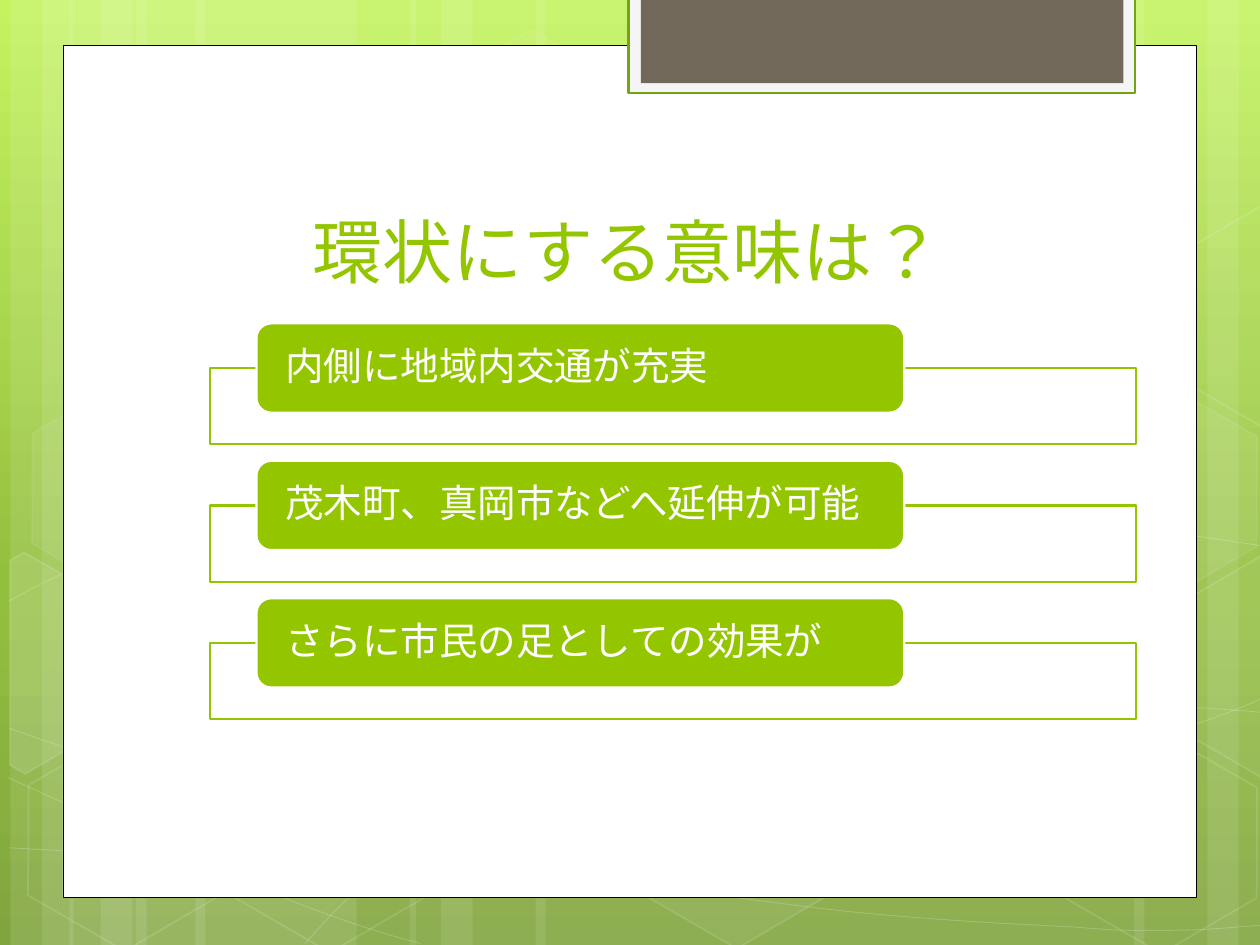
import pptx
import pptx.util
import pptx.dml.color
import pptx.enum.lang
import pptx.enum.shapes
import pptx.enum.text
import pptx.oxml.ns
import copy
import math
from lxml import etree

TITLE = "環状にする意味は？"
ITEMS = ["内側に地域内交通が充実", "茂木町、真岡市などへ延伸が可能", "さらに市民の足としての効果が"]
FONT, GREEN, WHITE = "TeX Gyre Adventor", "94C600", "FFFFFF"
SKY = [(0, "C3F35F"), (62, "93BF3F"), (100, "81A53E")]

# left, width
BANDS = [(2.74, 4.45), (0.21, 1.27), (0.85, 2.11), (3.94, 4.45), (1.4, 1.27), (2.03, 2.11),
         (18.62, 4.45), (24.34, 1.27), (22.86, 2.11), (10.8, 7.82), (8.26, 1.27), (8.89, 2.11)]
# start, then triples of cubic control points
CURVES = [
    [(0.18, 17.09), (1.55, 17.17), (2.92, 17.25), (4.83, 17.22), (6.74, 17.2), (9.09, 17.15),
     (11.63, 16.89), (14.17, 16.64), (17.78, 16.15), (20.12, 15.67), (22.43, 15.19),
     (24.82, 14.43), (25.58, 14)],
    [(0.18, 12.12), (0.91, 11.71), (1.65, 11.33), (3.07, 10.95), (4.52, 10.57), (6.58, 10.01),
     (8.81, 9.83), (11.07, 9.65), (13.82, 9.63), (16.61, 9.83), (19.41, 10.03),
     (24.05, 10.82), (25.58, 11.02)],
    [(0.15, 15.67), (3.23, 17.07), (6.27, 18.47), (8.48, 19.02)],
    [(0.18, 14.68), (0.97, 14.96), (1.78, 15.24), (3.25, 15.65), (4.72, 16.03), (6.93, 16.66),
     (9.07, 17.09), (11.18, 17.53), (13.84, 17.98), (15.95, 18.24), (18.06, 18.52),
     (20.32, 18.62), (21.67, 18.69), (22.99, 18.8), (23.34, 18.75), (24, 18.75),
     (24.66, 18.72), (25.12, 18.67), (25.58, 18.64)],
    [(6.15, 19.02), (6.6, 18.52), (7.06, 18.01), (7.67, 17.55), (8.28, 17.09), (9.14, 16.59),
     (9.86, 16.23), (10.57, 15.88), (11, 15.72), (11.94, 15.47), (12.85, 15.21),
     (14.55, 14.86), (15.44, 14.68), (16.36, 14.5), (16.48, 14.5), (17.27, 14.45),
     (18.06, 14.38), (19.3, 14.3), (20.17, 14.27), (21.06, 14.25), (22.5, 14.27),
     (22.5, 14.27), (23, 14.27), (23.7, 14.27), (24.21, 14.27), (24.66, 14.3),
     (25.1, 14.33), (25.32, 14.35), (25.55, 14.38), (25.48, 14.35), (25.55, 14.38)],
]
# left, top, fill opacity, line opacity
CELLS = [(8.48, 0.91, 4, 8), (12.62, 14.96, 6, 12), (0.28, 15.01, 0, 12), (0.36, 7.92, 7, 8),
         (4.42, 15.04, 0, 12), (19.13, 11.51, 10, 12), (21.18, 15.06, 0, 12), (21.18, 7.98, 7, 8)]
# fill opacity, centre, corners
PARTS = [
    (10, (0.91, 13.59), [(0.2, 11.3), (0.48, 11.13), (2.44, 12.24), (2.41, 14.48),
                         (0.51, 15.6), (0.2, 15.42)]),
    (4, (25.02, 13.21), [(23.52, 12.32), (25.43, 11.2), (25.63, 11.33), (25.63, 15.57),
                         (25.45, 15.67), (23.52, 14.55)]),
    (0, (25.02, 6.12), [(23.52, 5.26), (25.43, 4.14), (25.65, 4.27), (25.63, 8.51),
                        (25.45, 8.61), (23.52, 7.49)]),
]
# left, top, width, height, fill, line, line width
PANELS = [(1.27, 0.91, 22.86, 17.19, WHITE, "000000", 0.5),
          (12.67, -0.05, 10.21, 1.93, "F5F5F5", "74A510", 1.25),
          (12.92, -0.05, 9.73, 1.73, "71685A", None, 0)]

Cm, Pt, qn = pptx.util.Cm, pptx.util.Pt, pptx.oxml.ns.qn
KIND = pptx.enum.shapes.MSO_SHAPE
MID = pptx.enum.text.MSO_ANCHOR.MIDDLE
LEFT = pptx.enum.text.PP_ALIGN.LEFT
TILT = 30


def tint(fill, hue, veil=100):
    fill.solid()
    fill.fore_color.rgb = pptx.dml.color.RGBColor.from_string(hue)
    if veil < 100:
        node = fill._xPr.find(".//" + qn("a:srgbClr"))
        etree.SubElement(node, qn("a:alpha"), val=str(veil * 1000))


def style(shape, hue=None, veil=100, edge=None, width=1, glow=100):
    shape.shadow.inherit = False
    if hue and veil:
        tint(shape.fill, hue, veil)
    else:
        shape.fill.background()
    if edge:
        tint(shape.line.fill, edge, glow)
        shape.line.width = Pt(width)
    else:
        shape.line.fill.background()
    return shape


def box(kind, left, top, wide, high, **look):
    return style(shapes.add_shape(kind, Cm(left), Cm(top), Cm(wide), Cm(high)), **look)


def trace(dots, close, **look):
    dots = [(Cm(x), Cm(y)) for x, y in dots]
    pen = shapes.build_freeform(*dots[0])
    pen.add_line_segments(dots[1:], close=close)
    return style(pen.convert_to_shape(), **look)


def bend(shape):
    legs = shape._element.findall(".//" + qn("a:lnTo"))
    for first, *rest in zip(legs[::3], legs[1::3], legs[2::3]):
        curve = etree.Element(qn("a:cubicBezTo"))
        first.addprevious(curve)
        for leg in (first, *rest):
            curve.append(leg[0])
            leg.getparent().remove(leg)


def turn(dots, mid, angle):
    cos, sin = math.cos(math.radians(angle)), math.sin(math.radians(angle))
    return [(mid[0] + (x - mid[0]) * cos - (y - mid[1]) * sin,
             mid[1] + (x - mid[0]) * sin + (y - mid[1]) * cos) for x, y in dots]


def write(shape, text, size=22, hue=WHITE, align=LEFT, anchor=MID, pad=0.25, rim=0.13, lead=1):
    frame = shape.text_frame
    frame.word_wrap = True
    frame.auto_size = pptx.enum.text.MSO_AUTO_SIZE.NONE
    frame.vertical_anchor = anchor
    frame.margin_left = frame.margin_right = Cm(pad)
    frame.margin_top = frame.margin_bottom = Cm(rim)
    para = frame.paragraphs[0]
    para.alignment, para.line_spacing = align, lead
    run = para.add_run()
    run.text = text
    run.font.name, run.font.size = FONT, Pt(size)
    run.font.language_id = pptx.enum.lang.MSO_LANGUAGE_ID.JAPANESE
    tint(run.font.fill, hue)


def paint(slide):
    fill = slide.background.fill
    fill.gradient()
    fill.gradient_angle = 270
    stops = slide._element.find(".//" + qn("a:gsLst"))
    stops.append(copy.deepcopy(stops[-1]))
    for stop, (pos, hue) in zip(fill.gradient_stops, SKY):
        stop.position = pos / 100
        stop.color.rgb = pptx.dml.color.RGBColor.from_string(hue)


def main():
    """Build the slide on the loop line and save it."""
    global shapes
    deck = pptx.Presentation()
    deck.slide_width, deck.slide_height = Cm(25.4), Cm(19.05)
    slide = deck.slides.add_slide(deck.slide_layouts[5])
    shapes = slide.shapes
    paint(slide)

    for left, wide in BANDS:
        box(KIND.RECTANGLE, left, 0, wide, 19.05, hue=WHITE, veil=10)
    for dots in CURVES:
        bend(trace(dots, False, edge=WHITE, width=0.5, glow=20))
    for left, top, veil, glow in CELLS:
        cell = box(KIND.HEXAGON, left, top, 4.45, 3.86, hue=WHITE, veil=veil, edge=WHITE, glow=glow)
        cell.adjustments[0] = 0.285
        cell.rotation = TILT
    for veil, mid, dots in PARTS:
        part = trace(turn(dots, mid, -TILT), True, hue=WHITE, veil=veil, edge=WHITE, glow=12)
        part.rotation = TILT
    for *place, hue, edge, width in PANELS:
        box(KIND.RECTANGLE, *place, hue=hue, edge=edge, width=width)

    for row, text in enumerate(ITEMS):
        top = 6.52 + row * 2.77
        box(KIND.RECTANGLE, 4.24, top + 0.9, 18.67, 1.54, hue=WHITE, veil=90, edge=GREEN, width=1.25)
        label = box(KIND.ROUNDED_RECTANGLE, 5.17, top, 13.06, 1.8, hue=GREEN, edge=WHITE, width=1.25)
        write(label, text, pad=0.5, rim=0, lead=0.9)

    head = shapes.title
    head.left, head.top, head.width, head.height = Cm(2.9), Cm(2.84), Cm(19.51), Cm(3.18)
    write(head, TITLE, size=40, hue=GREEN, align=pptx.enum.text.PP_ALIGN.CENTER,
          anchor=pptx.enum.text.MSO_ANCHOR.BOTTOM)
    shapes._spTree.append(head._element)
    deck.save("out.pptx")


if __name__ == "__main__":
    main()
